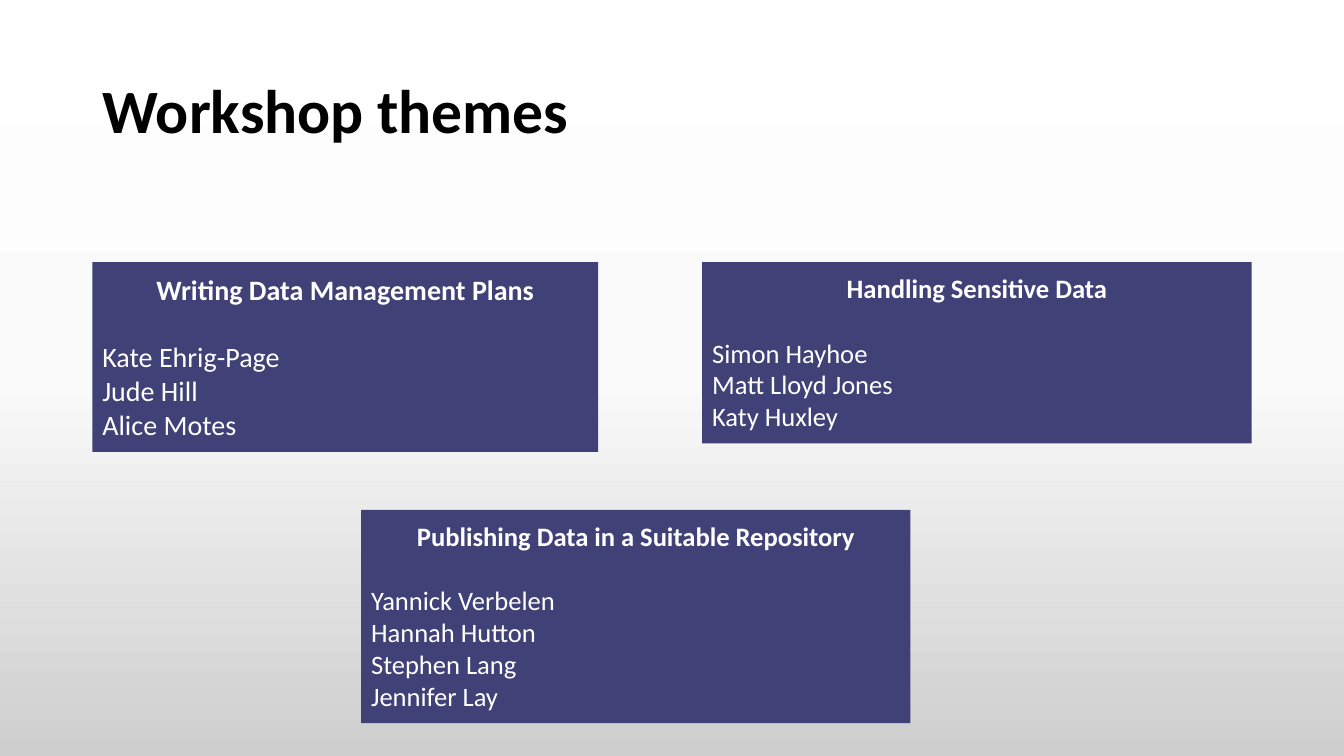
import copy

import pptx
import pptx.dml.color
import pptx.enum.shapes
import pptx.enum.text
import pptx.util

COLS, ROWS = 16, 9
LEFT, TOP = 1.1, 3.12
WIDE = 6.54

# Each theme: heading, people, text size, (column, row, columns, rows)
THEMES = [
    ("Writing Data Management Plans",
     ["Kate Ehrig-Page", "Jude Hill", "Alice Motes"],
     20, (LEFT, TOP, 6.02, 2.26)),
    ("Publishing Data in a Suitable Repository",
     ["Yannick Verbelen", "Hannah Hutton", "Stephen Lang", "Jennifer Lay"],
     19, (4.3, 6.07, WIDE, 2.54)),
    ("Handling Sensitive Data",
     ["Simon Hayhoe", "Matt Lloyd Jones", "Katy Huxley"],
     19, (8.36, TOP, WIDE, 2.16)),
]


def color(code):
    return pptx.dml.color.RGBColor.from_string(code)


class Deck:
    font = "Calibri"
    ink, paper, panel = "000000", "FFFFFF", "404177"
    shades = [(0, "FFFFFF"), (0.5, "FAFAFA"), (1, "CECECE")]

    def __init__(self):
        self.show = pptx.Presentation()
        self.show.slide_width = pptx.util.Inches(13.33)
        self.show.slide_height = pptx.util.Inches(7.5)
        self.slide = self.show.slides.add_slide(self.show.slide_layouts[5])

    def place(self, col, row, cols, rows):
        """Turn grid units into left, top, width and height."""
        across = self.show.slide_width / COLS
        down = self.show.slide_height / ROWS
        return (round(col * across), round(row * down),
                round(cols * across), round(rows * down))

    def style(self, line, size, code, bold):
        for run in line.runs:
            run.font.name = self.font
            run.font.size = pptx.util.Pt(size)
            run.font.bold = bold
            run.font.color.rgb = color(code)

    def backdrop(self):
        fill = self.slide.background.fill
        fill.gradient()
        fill.gradient_angle = 270
        first = self.slide.element.xpath("./p:cSld/p:bg//a:gs")[0]
        first.addnext(copy.deepcopy(first))
        for stop, (share, code) in zip(fill.gradient_stops, self.shades):
            stop.position = share
            stop.color.rgb = color(code)

    def title(self, text, area):
        head = self.slide.shapes.title
        head.left, head.top, head.width, head.height = self.place(*area)
        frame = head.text_frame
        frame.text = text
        frame.auto_size = pptx.enum.text.MSO_AUTO_SIZE.NONE
        frame.vertical_anchor = pptx.enum.text.MSO_ANCHOR.MIDDLE
        line = frame.paragraphs[0]
        line.alignment = pptx.enum.text.PP_ALIGN.LEFT
        line.line_spacing = 0.9
        self.style(line, 44, self.ink, True)

    def card(self, heading, people, size, area):
        box = self.slide.shapes.add_shape(
            pptx.enum.shapes.MSO_SHAPE.RECTANGLE, *self.place(*area))
        box.shadow.inherit = False
        box.fill.solid()
        box.fill.fore_color.rgb = color(self.panel)
        box.line.fill.background()
        frame = box.text_frame
        frame.text = "\n".join([heading, *people])
        frame.word_wrap = True
        frame.auto_size = pptx.enum.text.MSO_AUTO_SIZE.SHAPE_TO_FIT_TEXT
        frame.vertical_anchor = pptx.enum.text.MSO_ANCHOR.TOP
        frame.margin_left = frame.margin_right = pptx.util.Inches(0.1)
        frame.margin_top = frame.margin_bottom = pptx.util.Inches(0.1)
        align = pptx.enum.text.PP_ALIGN
        for spot, line in enumerate(frame.paragraphs):
            line.alignment = align.LEFT if spot else align.CENTER
            self.style(line, size, self.paper, spot == 0)
        frame.paragraphs[1].space_before = pptx.util.Pt(round(size * 1.22, 1))


def main():
    deck = Deck()
    deck.backdrop()
    deck.title("Workshop themes", (LEFT, 0.48, 11.65, 1.74))
    for theme in THEMES:
        deck.card(*theme)
    deck.show.save("out.pptx")


if __name__ == "__main__":
    main()
